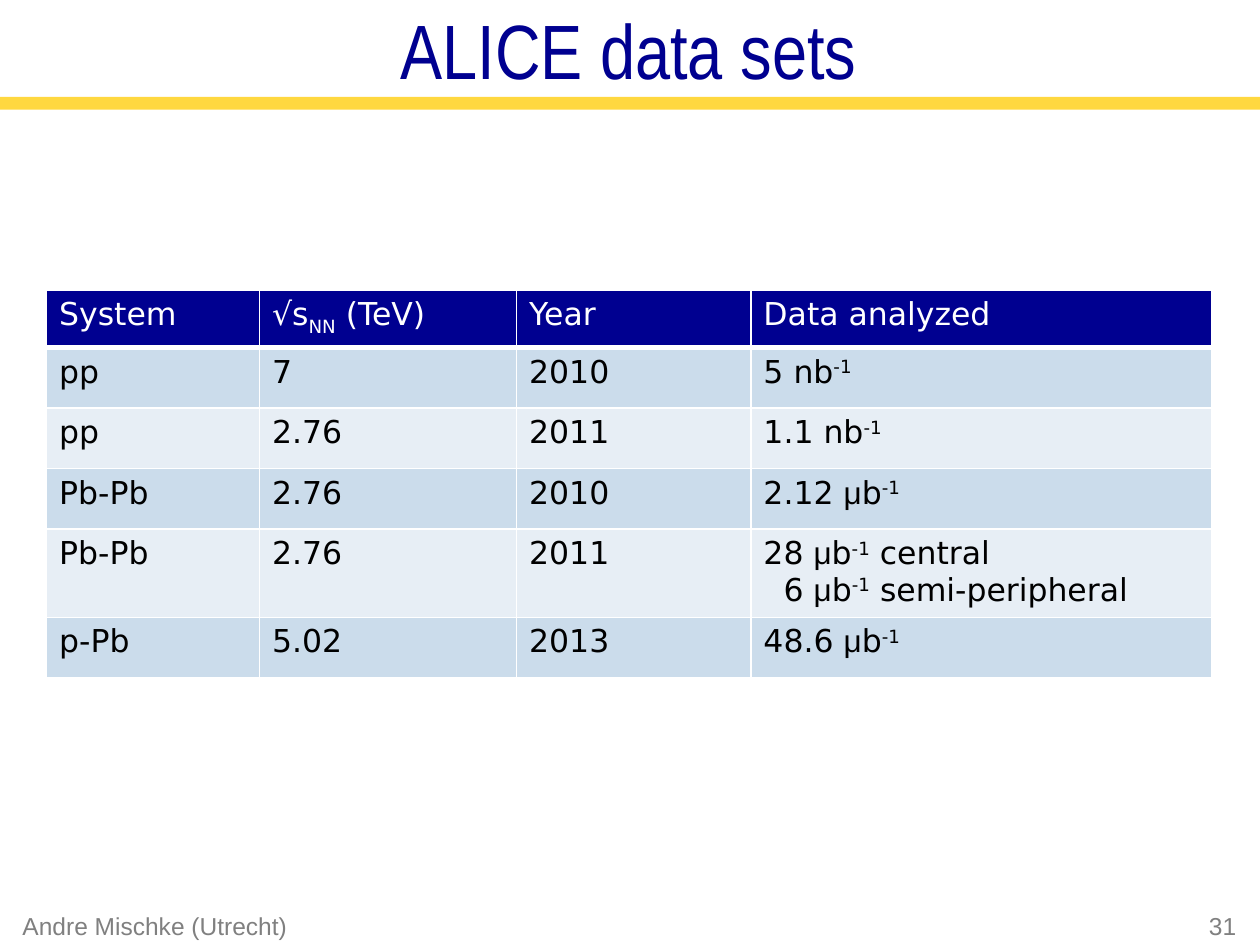
from typing import NamedTuple

from lxml.etree import SubElement
from pptx import Presentation
from pptx.dml.color import RGBColor
from pptx.enum.shapes import MSO_SHAPE
from pptx.enum.text import MSO_AUTO_SIZE, PP_ALIGN
from pptx.oxml.ns import qn
from pptx.util import Inches, Pt

NAVY = RGBColor(0x00, 0x00, 0x90)
GOLD = RGBColor(0xFF, 0xCC, 0x00)
GRAY = RGBColor(0x80, 0x80, 0x80)
WHITE = RGBColor(0xFF, 0xFF, 0xFF)
BLACK = RGBColor(0x00, 0x00, 0x00)
BLUE_BAND = RGBColor(0xCB, 0xDC, 0xEB)
PALE_BAND = RGBColor(0xE7, 0xEE, 0xF5)

TABLE_FONT = "DejaVu Sans"
SUBSCRIPT, SUPERSCRIPT = -25, 30


class Piece(NamedTuple):
    text: str
    baseline: int = 0
    font: str = TABLE_FONT


class Line(NamedTuple):
    pieces: list[Piece]
    indent: float = 0


class Label(NamedTuple):
    text: str
    left: float
    top: float
    width: float
    height: float
    size: int
    font: str
    color: RGBColor
    align: PP_ALIGN
    wrap: bool = True


def plain(text: str) -> list[Line]:
    return [Line([Piece(text)])]


def luminosity(value: str, micro: bool = True, note: str = "", indent: float = 0) -> Line:
    """An integrated luminosity in inverse microbarn or nanobarn."""
    if micro:
        pieces = [Piece(f"{value} "), Piece("μ", font="Arial"), Piece("b")]
    else:
        pieces = [Piece(f"{value} nb")]
    pieces.append(Piece("-1", SUPERSCRIPT))
    if note:
        pieces.append(Piece(f" {note}"))
    return Line(pieces, indent)


LABELS = [
    Label("ALICE data sets", 3.06, -0.03, 3.86, 0.84, 44, "Arial Narrow", NAVY,
          PP_ALIGN.CENTER, wrap=False),
    Label("Andre Mischke (Utrecht)", 0.08, 7.18, 2.55, 0.52, 14, "Arial", GRAY, PP_ALIGN.LEFT),
    Label("31", 7.58, 7.18, 2.33, 0.52, 14, "Arial", GRAY, PP_ALIGN.RIGHT),
]

COLUMN_WIDTHS = [1.69, 2.04, 1.86, 3.66]
ROW_HEIGHTS = [0.46, 0.48, 0.48, 0.48, 0.7, 0.48]
ENERGY_HEADING = [Line([Piece("√s"), Piece("NN", SUBSCRIPT), Piece(" (TeV)")])]
HEADINGS = [plain("System"), ENERGY_HEADING, plain("Year"), plain("Data analyzed")]
DATA_SETS = [
    ("pp", "7", "2010", [luminosity("5", micro=False)]),
    ("pp", "2.76", "2011", [luminosity("1.1", micro=False)]),
    ("Pb-Pb", "2.76", "2010", [luminosity("2.12")]),
    ("Pb-Pb", "2.76", "2011", [luminosity("28", note="central"),
                               luminosity("6", note="semi-peripheral", indent=0.16)]),
    ("p-Pb", "5.02", "2013", [luminosity("48.6")]),
]


def add_rule(slide) -> None:
    rule = slide.shapes.add_shape(MSO_SHAPE.RECTANGLE, 0, Inches(0.77), Inches(10), Inches(0.1))
    rule.shadow.inherit = False
    rule.line.fill.background()
    rule.fill.solid()
    rule.fill.fore_color.rgb = GOLD
    color = next(rule.fill._xPr.iter(qn("a:srgbClr")))
    SubElement(color, qn("a:alpha"), val="75000")


def add_label(slide, label: Label) -> None:
    box = slide.shapes.add_textbox(Inches(label.left), Inches(label.top),
                                   Inches(label.width), Inches(label.height))
    frame = box.text_frame
    frame.text = label.text
    frame.word_wrap = label.wrap
    if not label.wrap:
        frame.auto_size = MSO_AUTO_SIZE.SHAPE_TO_FIT_TEXT
    paragraph = frame.paragraphs[0]
    paragraph.alignment = label.align
    font = paragraph.runs[0].font
    font.size, font.name = Pt(label.size), label.font
    font.color.rgb = label.color


def add_border(cell, side: str, width: float) -> None:
    properties = cell._tc.get_or_add_tcPr()
    border = SubElement(properties, qn(f"a:{side}"), w=str(Pt(width)))
    fill = SubElement(border, qn("a:solidFill"))
    SubElement(fill, qn("a:srgbClr"), val=str(WHITE))


def write_line(paragraph, line: Line, color: RGBColor) -> None:
    if line.indent:
        paragraph._p.get_or_add_pPr().set("marL", str(Inches(line.indent)))
    for piece in line.pieces:
        run = paragraph.add_run()
        run.text = piece.text
        run.font.size, run.font.name = Pt(18), piece.font
        run.font.color.rgb = color
        if piece.baseline:
            run.font._element.set("baseline", str(piece.baseline * 1000))


def fill_cell(cell, lines: list[Line], row: int) -> None:
    # The header is set off by a thicker line below it
    add_border(cell, "lnL", 1)
    add_border(cell, "lnR", 1)
    add_border(cell, "lnT", 3 if row == 1 else 1)
    add_border(cell, "lnB", 3 if row == 0 else 1)
    cell.fill.solid()
    cell.fill.fore_color.rgb = NAVY if row == 0 else (PALE_BAND, BLUE_BAND)[row % 2]
    cell.margin_left = cell.margin_right = Inches(0.1)
    cell.margin_top = cell.margin_bottom = Inches(0.05)
    frame = cell.text_frame
    for index, line in enumerate(lines):
        paragraph = frame.add_paragraph() if index else frame.paragraphs[0]
        write_line(paragraph, line, BLACK if row else WHITE)


def add_data_table(slide) -> None:
    rows = [HEADINGS]
    for system, energy, year, data in DATA_SETS:
        rows.append([plain(system), plain(energy), plain(year), data])
    table = slide.shapes.add_table(
        len(rows), len(COLUMN_WIDTHS), Inches(0.37), Inches(2.3),
        Inches(sum(COLUMN_WIDTHS)), Inches(sum(ROW_HEIGHTS))).table
    for column, width in zip(table.columns, COLUMN_WIDTHS):
        column.width = Inches(width)
    for row, height in zip(table.rows, ROW_HEIGHTS):
        row.height = Inches(height)
    # The navy header uses regular weight
    table.first_row = False
    for row, contents in enumerate(rows):
        for column, lines in enumerate(contents):
            fill_cell(table.cell(row, column), lines, row)


def main() -> None:
    presentation = Presentation()
    presentation.slide_width, presentation.slide_height = Inches(10), Inches(7.5)
    slide = presentation.slides.add_slide(presentation.slide_layouts[6])
    add_rule(slide)
    for label in LABELS:
        add_label(slide, label)
    add_data_table(slide)
    presentation.save("out.pptx")


if __name__ == "__main__":
    main()
